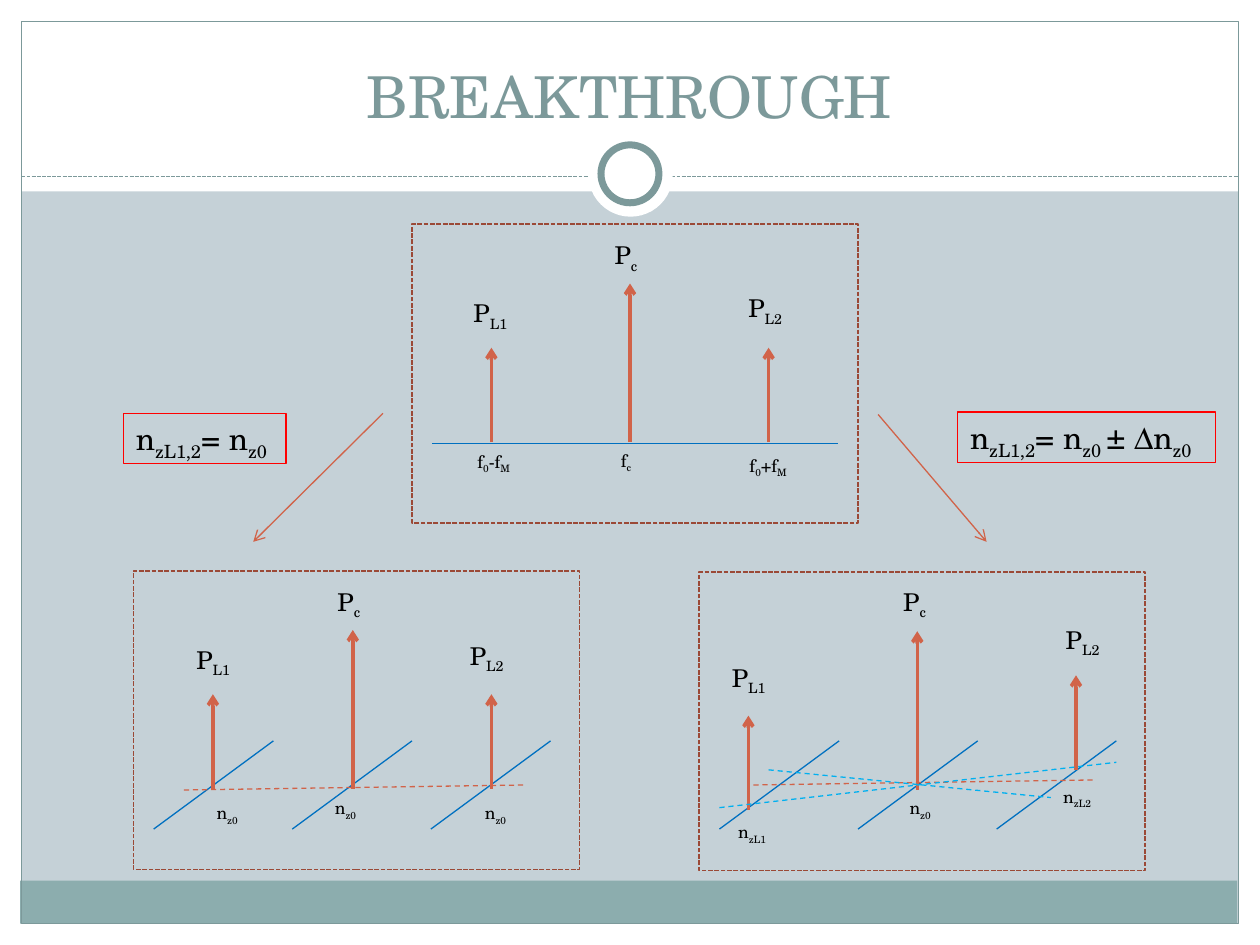
"""Build the BREAKTHROUGH slide: a carrier with two sidebands and its two outcomes."""
from lxml.etree import SubElement
from pptx import Presentation
from pptx.dml.color import RGBColor
from pptx.enum.dml import MSO_LINE
from pptx.enum.shapes import MSO_CONNECTOR, MSO_SHAPE
from pptx.enum.text import MSO_ANCHOR, PP_ALIGN
from pptx.oxml.ns import qn
from pptx.util import Inches, Pt

COLORS = {
    "background": "C5D1D7", "white": "FFFFFF", "footer": "8CADAE", "slate": "7C999A",
    "black": "000000", "orange": "D16349", "brown": "9B4936", "blue": "0070C0",
    "cyan": "00B0F0", "red": "FF0000",
}
COLORS = {name: RGBColor.from_string(value) for name, value in COLORS.items()}
FONT = "TeX Gyre Schola"

presentation = Presentation()
presentation.slide_width = Inches(10)
presentation.slide_height = Inches(7.5)
slide = presentation.slides.add_slide(presentation.slide_layouts[6])
slide.background.fill.solid()
slide.background.fill.fore_color.rgb = COLORS["background"]


def add_text(text, box, size=10, color="black", align=PP_ALIGN.LEFT,
             anchor=MSO_ANCHOR.TOP, wrap=False, border=None):
    """Add a text box; every second part between bars is a subscript."""
    shape = slide.shapes.add_textbox(*map(Inches, box))
    if border:
        shape.line.color.rgb = COLORS[border]
        shape.line.width = Pt(0.75)
    frame = shape.text_frame
    frame.word_wrap = wrap
    frame.vertical_anchor = anchor
    paragraph = frame.paragraphs[0]
    paragraph.alignment = align
    for index, part in enumerate(text.split("|")):
        if not part:
            continue
        run = paragraph.add_run()
        run.text = part
        run.font.name = FONT
        run.font.size = Pt(size)
        run.font.color.rgb = COLORS[color]
        if index % 2:
            run._r.get_or_add_rPr().set("baseline", "-25000")


def add_line(start, end, color, width=0.75, dash=None, arrow=False):
    """Add a straight line with an optional dash and arrowhead."""
    line = slide.shapes.add_connector(
        MSO_CONNECTOR.STRAIGHT, *map(Inches, (*start, *end)))
    line.line.color.rgb = COLORS[color]
    line.line.width = Pt(width)
    if dash:
        line.line.dash_style = dash
    if arrow:
        SubElement(line.line._get_or_add_ln(), qn("a:tailEnd"), type="arrow")
    SubElement(line._element.spPr, qn("a:effectLst"))


RECTANGLE, OVAL = MSO_SHAPE.RECTANGLE, MSO_SHAPE.OVAL
frame_shapes = [
    (RECTANGLE, (0, 7.33, 10, 0.17), "white", None, 0),
    (RECTANGLE, (0, 0, 10, 1.52), "white", None, 0),
    (RECTANGLE, (0, 0, 0.17, 7.5), "white", None, 0),
    (RECTANGLE, (9.83, 0, 0.17, 7.5), "white", None, 0),
    (RECTANGLE, (0.16, 6.99, 9.66, 0.34), "footer", None, 0),
    (RECTANGLE, (0.17, 0.17, 9.66, 7.16), None, "slate", 0.75),
    (OVAL, (4.67, 1.05, 0.67, 0.67), "white", None, 0),
    (OVAL, (4.77, 1.15, 0.46, 0.46), "white", "slate", 4),
]
panels = [(RECTANGLE, (left, top, 3.54, 2.37), None, "brown", 0.9)
          for left, top in ((3.27, 1.78), (1.06, 4.53), (5.55, 4.54))]

for kind, box, fill, outline, width in frame_shapes + panels:
    if box[0] == 4.67:
        add_line((0.17, 1.4), (9.83, 1.4), "slate", dash=MSO_LINE.SQUARE_DOT)
    shape = slide.shapes.add_shape(kind, *map(Inches, box))
    shape.shadow.inherit = False
    if fill:
        shape.fill.solid()
        shape.fill.fore_color.rgb = COLORS[fill]
    else:
        shape.fill.background()
    if outline:
        shape.line.color.rgb = COLORS[outline]
        shape.line.width = Pt(width)
    else:
        shape.line.fill.background()
    if outline == "brown":
        shape.line.dash_style = MSO_LINE.SQUARE_DOT

add_text("BREAKTHROUGH", (0.33, 0.25, 9.33, 0.83), size=33, color="slate",
         align=PP_ALIGN.CENTER, anchor=MSO_ANCHOR.BOTTOM, wrap=True)

add_line((3.43, 3.52), (6.65, 3.52), "blue")
for first_left in (1.22, 5.71):
    for index in range(3):
        left = first_left + 1.1 * index
        add_line((left, 6.58), (left + 0.95, 5.88), "blue")

sideband, carrier = 0.75, 1.26
power_arrows = [
    (3.9, 3.51, sideband), (5, 3.51, carrier), (6.1, 3.51, sideband),
    (1.69, 6.26, sideband), (2.8, 6.26, carrier), (3.9, 6.26, sideband),
    (5.94, 6.43, sideband), (7.28, 6.27, carrier), (8.54, 6.11, sideband),
]
for left, foot, height in power_arrows:
    add_line((left, foot), (left, foot - height), "orange", width=2, arrow=True)

power_labels = {
    "P|L1": (0.53, [(3.66, 2.32), (1.46, 5.07), (5.71, 5.21)]),
    "P|c": (0.46, [(4.78, 1.86), (2.58, 4.61), (7.07, 4.61)]),
    "P|L2": (0.58, [(5.84, 2.28), (3.63, 5.04), (8.36, 4.91)]),
}
for text, (width, places) in power_labels.items():
    for left, top in places:
        add_text(text, (left, top, width, 0.34), size=14, wrap=True)

axis_labels = [
    ("f|0|-f|M", 3.69, 3.53, 0.49), ("f|c", 4.83, 3.52, 0.36), ("f|0|+f|M", 5.85, 3.56, 0.53),
    ("n|z0", 1.62, 6.32, 0.38), ("n|z0", 2.56, 6.28, 0.48), ("n|z0", 3.75, 6.32, 0.38),
    ("n|zL1", 5.76, 6.47, 0.42), ("n|z0", 7.12, 6.28, 0.48), ("n|zL2", 8.34, 6.19, 0.44),
]
for text, left, top, width in axis_labels:
    add_text(text, (left, top, width, 0.27))

add_line((3.04, 3.28), (2.01, 4.3), "orange", arrow=True)
add_line((6.97, 3.29), (7.83, 4.3), "orange", arrow=True)

for start, end, color in [
    ((1.46, 6.27), (4.18, 6.23), "orange"),
    ((5.98, 6.23), (8.7, 6.19), "orange"),
    ((5.71, 6.41), (8.86, 6.05), "cyan"),
    ((6.1, 6.11), (8.34, 6.33), "cyan"),
]:
    add_line(start, end, color, dash=MSO_LINE.DASH)

add_text("n|zL1,2|= n|z0 |± Δn|z0", (7.6, 3.27, 2.05, 0.4), size=18, border="red")
add_text("n|zL1,2|= n|z0", (0.98, 3.28, 1.29, 0.4), size=18, border="red")

presentation.save("out.pptx")
